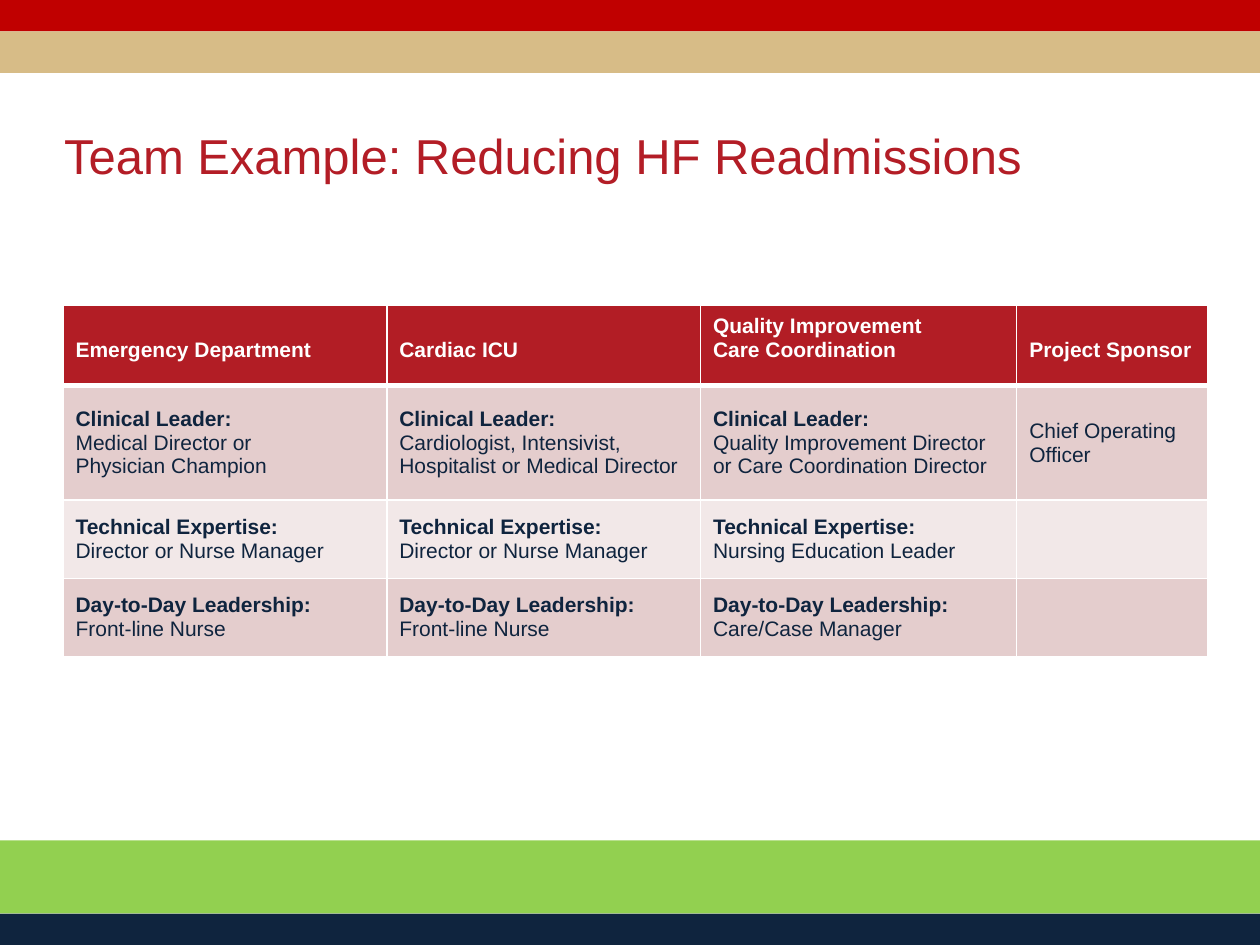
import pptx
import pptx.dml.color
import pptx.enum.shapes
import pptx.enum.text
import pptx.oxml
import pptx.oxml.ns
import pptx.util

COLORS = {
    "navy": "0F243E", "green": "92D050", "red": "C00000", "tan": "D7BC87",
    "title": "B31D26", "header": "B21D25", "rose": "E4CDCD", "blush": "F2E8E8",
    "white": "FFFFFF",
}


def rgb(name):
    return pptx.dml.color.RGBColor.from_string(COLORS[name])


def write_lines(frame, lines, formats):
    for index, (line, font_format) in enumerate(zip(lines, formats)):
        paragraph = frame.paragraphs[0] if index == 0 else frame.add_paragraph()
        paragraph.text = line
        for run in paragraph.runs:
            run.font.name = "Arial"
            run.font.color.rgb = rgb(font_format["color"])
            run.font.size = pptx.util.Pt(font_format["size"])
            run.font.bold = font_format["bold"]


presentation = pptx.Presentation()
presentation.slide_width = pptx.util.Inches(10)
presentation.slide_height = pptx.util.Inches(7.5)
slide = presentation.slides.add_slide(presentation.slide_layouts[6])

bands = [("navy", 7.25, 0.25), ("green", 6.67, 0.58), ("red", 0, 0.25), ("tan", 0.25, 0.33)]
for color, top, height in bands:
    band = slide.shapes.add_shape(
        pptx.enum.shapes.MSO_SHAPE.RECTANGLE, 0, pptx.util.Inches(top),
        presentation.slide_width, pptx.util.Inches(height))
    band.shadow.inherit = False
    band.fill.solid()
    band.fill.fore_color.rgb = rgb(color)
    band.line.fill.background()

title = slide.shapes.add_textbox(*map(pptx.util.Inches, (0.51, 1, 9.33, 1.09)))
title_settings = {"word_wrap": True, "margin_left": 0, "margin_right": 0}
for name, value in title_settings.items():
    setattr(title.text_frame, name, value)
write_lines(title.text_frame, ["Team Example: Reducing HF Readmissions"],
            [{"color": "title", "size": 28, "bold": False}])
title.text_frame.paragraphs[0].line_spacing = 0.9

column_widths = [2.57, 2.49, 2.51, 1.52]
row_heights = [0.62, 0.91, 0.62, 0.62]
row_fills = ["header", "rose", "blush", "rose"]
team_rows = [
    [["Emergency Department"], ["Cardiac ICU"],
     ["Quality Improvement", "Care Coordination"], ["Project Sponsor"]],
    [["Clinical Leader:", "Medical Director or\vPhysician Champion"],
     ["Clinical Leader:", "Cardiologist, Intensivist, Hospitalist or Medical Director"],
     ["Clinical Leader:", "Quality Improvement Director or Care Coordination Director"],
     ["Chief Operating Officer"]],
    [["Technical Expertise:", "Director or Nurse Manager"],
     ["Technical Expertise:", "Director or Nurse Manager"],
     ["Technical Expertise:", "Nursing Education Leader"], []],
    [["Day-to-Day Leadership:", "Front-line Nurse"],
     ["Day-to-Day Leadership:", "Front-line Nurse"],
     ["Day-to-Day Leadership:", "Care/Case Manager"], []],
]
table = slide.shapes.add_table(
    len(row_heights), len(column_widths), pptx.util.Inches(0.5), pptx.util.Inches(2.42),
    pptx.util.Inches(sum(column_widths)), pptx.util.Inches(sum(row_heights))).table
for column, width in zip(table.columns, column_widths):
    column.width = pptx.util.Inches(width)
for row, height in zip(table.rows, row_heights):
    row.height = pptx.util.Inches(height)

header_format = {"color": "white", "size": 12, "bold": True}
label_format = {"color": "navy", "size": 12, "bold": True}
detail_format = {"color": "navy", "size": 12, "bold": False}
namespace = pptx.oxml.ns.nsdecls("a")
for row_index, team_row in enumerate(team_rows):
    for column_index, lines in enumerate(team_row):
        cell = table.cell(row_index, column_index)
        heavy_side = {0: "B", 1: "T"}.get(row_index)
        for side in "LRTB":
            width = pptx.util.Pt(3 if side == heavy_side else 1)
            cell._tc.get_or_add_tcPr().append(pptx.oxml.parse_xml(
                f'<a:ln{side} {namespace} w="{width}"><a:solidFill>'
                f'<a:srgbClr val="{COLORS["white"]}"/></a:solidFill></a:ln{side}>'))
        cell.fill.solid()
        cell.fill.fore_color.rgb = rgb(row_fills[row_index])
        if row_index == 0:
            cell.vertical_anchor = pptx.enum.text.MSO_ANCHOR.BOTTOM
            cell.margin_bottom = pptx.util.Inches(0.19)
            formats = [header_format] * len(lines)
        else:
            cell.vertical_anchor = pptx.enum.text.MSO_ANCHOR.MIDDLE
            formats = [label_format, detail_format][-len(lines):]
        write_lines(cell.text_frame, lines, formats)

presentation.save("out.pptx")
